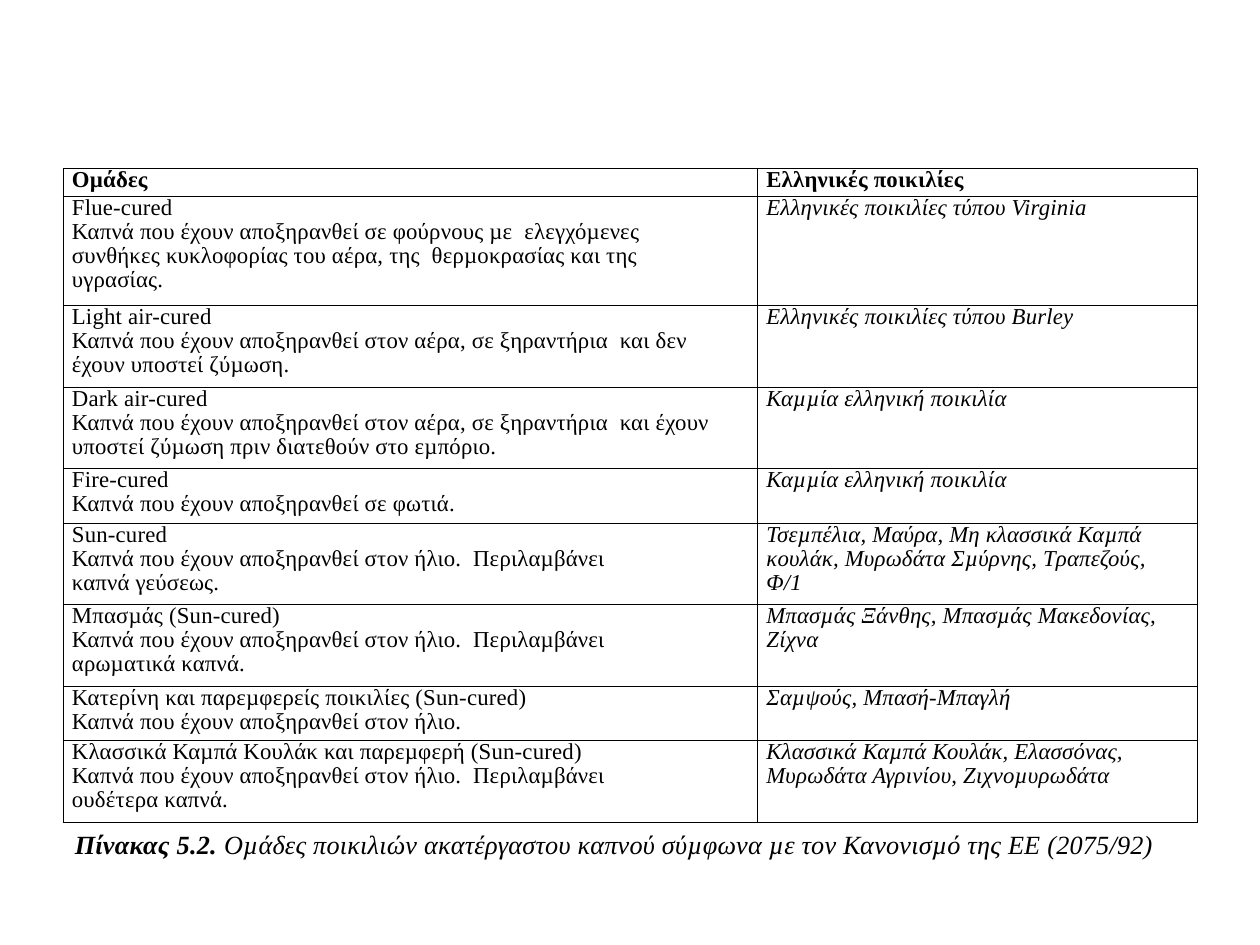
from lxml import etree
from pptx import Presentation
from pptx.dml.color import RGBColor
from pptx.oxml.ns import qn
from pptx.util import Cm, Pt

COLORS = {"ink": "000000"}
FONT = "Times New Roman"
BLANK = 6

HEADS = ["Οµάδες", "Ελληνικές ποικιλίες"]
AIR = "Καπνά που έχουν αποξηρανθεί στον αέρα, σε ξηραντήρια  και "
SUN = "Καπνά που έχουν αποξηρανθεί στον ήλιο."
NONE = "Καµµία ελληνική ποικιλία"

# group, description, varieties, lines high, right margins in cm
ROWS = [
    ("Flue-cured",
     "Καπνά που έχουν αποξηρανθεί σε φούρνους µε  ελεγχόµενες συνθήκες "
     "κυκλοφορίας του αέρα, της  θερµοκρασίας και της υγρασίας.",
     ["Ελληνικές ποικιλίες τύπου Virginia"], 4, (1.1, 0)),
    ("Light air-cured", AIR + "δεν έχουν υποστεί ζύµωση.",
     ["Ελληνικές ποικιλίες τύπου Burley"], 3, (0.8, 0)),
    ("Dark air-cured",
     AIR + "έχουν υποστεί ζύµωση πριν διατεθούν στο εµπόριο.",
     [NONE], 3, (0, 0)),
    ("Fire-cured", "Καπνά που έχουν αποξηρανθεί σε φωτιά.",
     [NONE], 2, (0, 0)),
    ("Sun-cured", SUN + "  Περιλαµβάνει καπνά γεύσεως.",
     ["Τσεµπέλια, Μαύρα, Μη κλασσικά Καµπά",
      "κουλάκ, Μυρωδάτα Σµύρνης, Τραπεζούς, Φ/1"], 3, (2.5, 0.6)),
    ("Μπασµάς (Sun-cured)", SUN + "  Περιλαµβάνει αρωµατικά καπνά.",
     ["Μπασµάς Ξάνθης, Μπασµάς Μακεδονίας,", "Ζίχνα"], 3, (2.5, 0)),
    ("Κατερίνη και παρεµφερείς ποικιλίες (Sun-cured)", SUN,
     ["Σαµψούς, Μπασή-Μπαγλή"], 2, (0, 0)),
    ("Κλασσικά Καµπά Κουλάκ και παρεµφερή (Sun-cured)",
     SUN + "  Περιλαµβάνει ουδέτερα καπνά.",
     ["Κλασσικά Καµπά Κουλάκ, Ελασσόνας, Μυρωδάτα Αγρινίου, "
      "Ζιχνοµυρωδάτα"], 3, (2.5, 0)),
]
CAPTION = [("Πίνακας 5.2. ", True),
           ("Οµάδες ποικιλιών ακατέργαστου καπνού σύµφωνα µε τον Κανονισµό "
            "της ΕΕ (2075/92)", False)]

WIDTHS = [14, 8.86]
HEIGHTS = {1: 0.56, 2: 1.09, 3: 1.65, 4: 2.2}


def write(par, text, size=13, bold=False, italic=False, indent=0.18, pitch=0.96):
    par.line_spacing = pitch
    par._p.get_or_add_pPr().set("marL", str(Cm(indent)))
    run = par.add_run()
    run.text = text
    font = run.font
    font.name, font.size = FONT, Pt(size)
    font.bold, font.italic = bold, italic
    font.color.rgb = RGBColor.from_string(COLORS["ink"])
    run._r.get_or_add_rPr().set("spc", "13")


def clear(area, right=0):
    area.margin_left = area.margin_top = area.margin_bottom = 0
    area.margin_right = Cm(right)


def frame(cell):
    """Draw a thin line on all four sides and drop the style's fill."""
    props = cell._tc.get_or_add_tcPr()
    for side in "LRTB":
        line = etree.SubElement(props, qn(f"a:ln{side}"), w=str(Pt(0.48)))
        fill = etree.SubElement(line, qn("a:solidFill"))
        etree.SubElement(fill, qn("a:srgbClr"), val=COLORS["ink"])
    cell.fill.background()


def fill_cell(cell, lines, right=0, **form):
    clear(cell, right)
    frame(cell)
    body = cell.text_frame
    for i, line in enumerate(lines):
        par = body.add_paragraph() if i else body.paragraphs[0]
        write(par, line, **form)


def add_groups(slide):
    highs = [HEIGHTS[n] for n in [1] + [row[3] for row in ROWS]]
    table = slide.shapes.add_table(
        len(highs), len(WIDTHS), Cm(1.27), Cm(3.39),
        Cm(sum(WIDTHS)), Cm(sum(highs))).table
    for col, wide in zip(table.columns, WIDTHS):
        col.width = Cm(wide)
    for row, high in zip(table.rows, highs):
        row.height = Cm(high)
    for c, head in enumerate(HEADS):
        fill_cell(table.cell(0, c), [head], bold=True)
    for r, (group, about, kinds, _, rights) in enumerate(ROWS, 1):
        fill_cell(table.cell(r, 0), [group, about], rights[0])
        fill_cell(table.cell(r, 1), kinds, rights[1], italic=True)


def add_caption(slide):
    box = slide.shapes.add_textbox(Cm(1.48), Cm(16.7), Cm(23.14), Cm(0.64))
    body = box.text_frame
    body.word_wrap = True
    clear(body)
    for text, bold in CAPTION:
        write(body.paragraphs[0], text, size=15, bold=bold, italic=True,
              indent=0.03, pitch=1.0)


def main():
    deck = Presentation()
    deck.slide_width, deck.slide_height = Cm(25.4), Cm(19.05)
    slide = deck.slides.add_slide(deck.slide_layouts[BLANK])
    add_groups(slide)
    add_caption(slide)
    deck.save("out.pptx")


if __name__ == "__main__":
    main()
